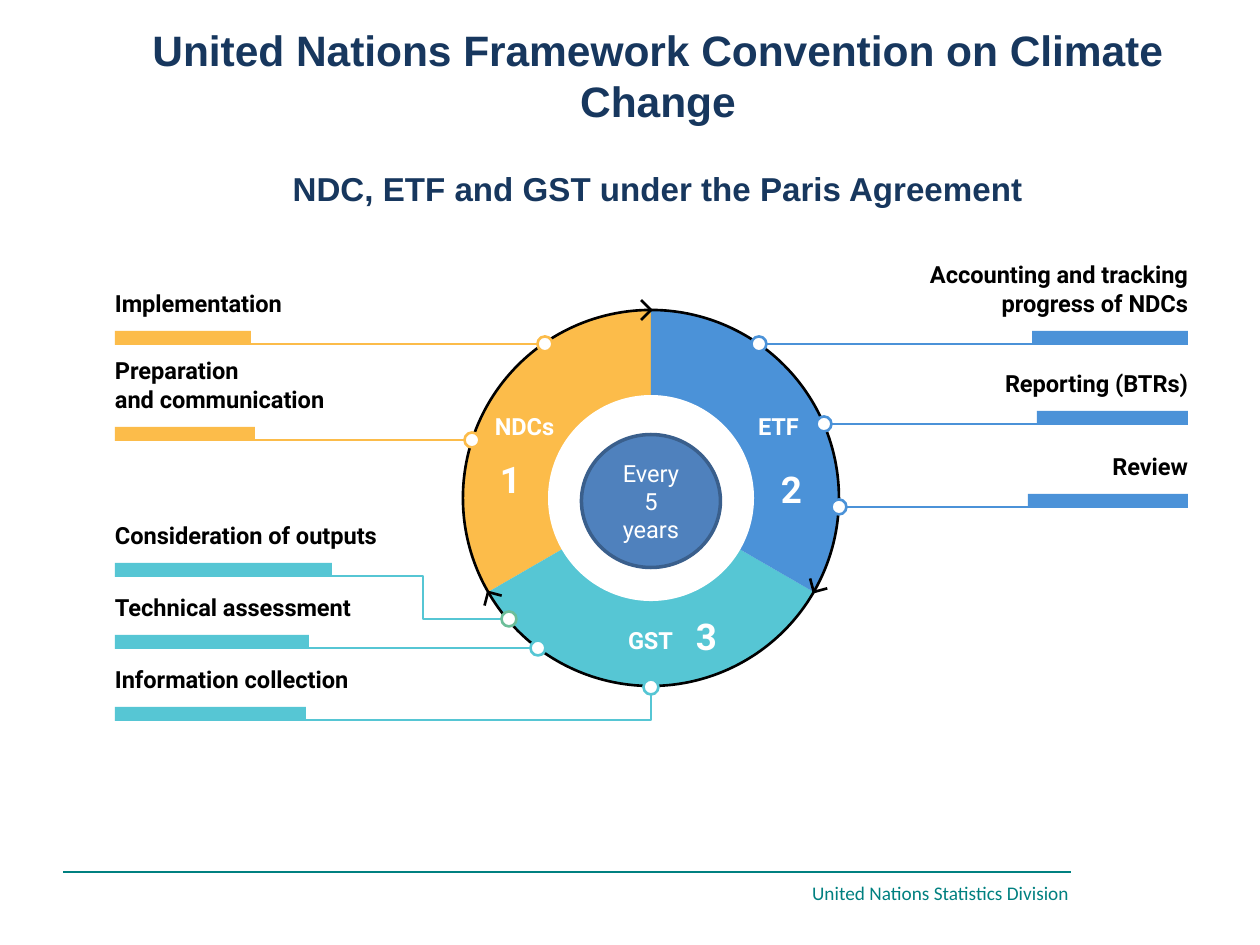
from math import cos, radians, sin

from lxml import etree
from pptx import Presentation
from pptx import util as u
from pptx.dml.color import RGBColor
from pptx.enum import shapes, text
from pptx.oxml import ns

PX = 914400 / 126
NAVY = RGBColor(0x17, 0x37, 0x5E)
TEAL = RGBColor(0x00, 0x80, 0x80)
YELLOW = RGBColor(0xFC, 0xBC, 0x4A)
BLUE = RGBColor(0x4B, 0x92, 0xD8)
CYAN = RGBColor(0x56, 0xC6, 0xD4)
GREEN = RGBColor(0x6C, 0xBE, 0x99)
HUB_FILL = RGBColor(0x4F, 0x81, 0xBD)
HUB_LINE = RGBColor(0x3A, 0x5F, 0x8C)
BLACK = RGBColor(0, 0, 0)
WHITE = RGBColor(255, 255, 255)

CX, CY, RADIUS = 651, 498, 188
LEFT, RIGHT = 115, 1188
BAR_H, DOT = 14, 15
ALIGN = text.PP_ALIGN
ANCHOR = text.MSO_ANCHOR


def px(*lengths):
    return [u.Emu(round(n * PX)) for n in lengths]


def write(p, content, size=13.5, color=BLACK, bold=True, font="Roboto",
          align=ALIGN.LEFT):
    p.text = content
    p.alignment = align
    for r in p.runs:
        r.font.name, r.font.size, r.font.bold = font, u.Pt(size), bold
        r.font.color.rgb = color


def add_label(s, box, content, bottom=6, **fmt):
    tf = s.shapes.add_textbox(*px(*box)).text_frame
    tf.word_wrap = True
    tf.vertical_anchor = ANCHOR.BOTTOM
    tf.margin_left = tf.margin_right = tf.margin_top = 0
    tf.margin_bottom = px(bottom)[0]
    write(tf.paragraphs[0], content, **fmt)


def paint(sp, fill=None, line=None, width=1.5):
    sp.shadow.inherit = False
    if fill is None:
        sp.fill.background()
    else:
        sp.fill.solid()
        sp.fill.fore_color.rgb = fill
    if line is None:
        sp.line.fill.background()
    else:
        sp.line.color.rgb = line
        sp.line.width = u.Pt(width)
    return sp


def add_ellipse(s, cx, cy, w, h, **look):
    box = px(cx - w / 2, cy - h / 2, w, h)
    return paint(s.shapes.add_shape(shapes.MSO_SHAPE.OVAL, *box), **look)


def add_outline(s, points, close=False, **look):
    first, *rest = [px(*pt) for pt in points]
    builder = s.shapes.build_freeform(*first)
    builder.add_line_segments(rest, close=close)
    return paint(builder.convert_to_shape(), **look)


def add_line(s, start, end, color):
    c = s.shapes.add_connector(shapes.MSO_CONNECTOR.STRAIGHT,
                               *px(*start, *end))
    c.line.color.rgb = color
    c.line.width = u.Pt(1.5)
    etree.SubElement(c._element.spPr, ns.qn("a:effectLst"))


def polar(angle, r, origin=(CX, CY)):
    """Point at a clockwise angle from twelve o'clock."""
    a = radians(angle)
    return origin[0] + r * sin(a), origin[1] - r * cos(a)


def add_sector(s, start, color):
    arc = [polar(start + step, RADIUS) for step in range(0, 121, 2)]
    add_outline(s, [(CX, CY), *arc], close=True, fill=color)


def add_ring_arrow(s, angle):
    """Open clockwise arrowhead on the ring."""
    tip = polar(angle, RADIUS)
    legs = [polar(angle + 270 + turn, 14, tip) for turn in (45, -45)]
    add_outline(s, [legs[0], tip, legs[1]], line=BLACK)


def add_callout(s, content, color, bar_y, bar_w, dot, lines=1, on_right=False,
                bend=(), dot_line=None):
    """Label above a bar, with a leader through any bends to a ring dot."""
    text_w = 301 if on_right else 480
    text_h = 7 + 28 * lines
    text_x = RIGHT - text_w if on_right else LEFT
    add_label(s, (text_x, bar_y - 8 - text_h, text_w, text_h), content,
              align=ALIGN.RIGHT if on_right else ALIGN.LEFT)

    bar_x = RIGHT - bar_w if on_right else LEFT
    paint(s.shapes.add_shape(shapes.MSO_SHAPE.RECTANGLE,
                             *px(bar_x, bar_y, bar_w, BAR_H)), fill=color)

    start = (RIGHT if on_right else LEFT, bar_y + BAR_H - 1)
    if bend:
        add_outline(s, [start, *bend, dot], line=color)
    else:
        add_line(s, start, dot, color)
    add_ellipse(s, *dot, DOT, DOT, fill=WHITE, line=dot_line or color)


def add_title(s):
    title = s.shapes.title
    title.left, title.top, title.width, title.height = px(127, 84, 1062, 64)
    tf = title.text_frame
    tf.auto_size = text.MSO_AUTO_SIZE.NONE
    tf.word_wrap = True
    tf.vertical_anchor = ANCHOR.MIDDLE
    fmt = dict(color=NAVY, font="Arial", align=ALIGN.CENTER)
    write(tf.paragraphs[0],
          "United Nations Framework Convention on Climate Change",
          size=24.3, **fmt)
    p = tf.add_paragraph()
    write(p, "NDC, ETF and GST under the Paris Agreement", size=18.9, **fmt)
    p.space_before = u.Pt(24)


def add_wheel(s):
    for start, color in ((240, YELLOW), (120, CYAN), (0, BLUE)):
        add_sector(s, start, color)
    add_ellipse(s, CX, CY, 206, 206, fill=WHITE)
    add_ellipse(s, CX, CY, 2 * RADIUS, 2 * RADIUS, line=BLACK)
    for angle in (0, 120, 240):
        add_ring_arrow(s, angle)

    white = dict(color=WHITE, align=ALIGN.CENTER)
    for name, name_at, number, number_at in (
            ("NDCs", (476, 411), "1", (462, 457)),
            ("ETF", (730, 411), "2", (743, 467)),
            ("GST", (602, 625), "3", (658, 614))):
        add_label(s, (*name_at, 97, 35), name, **white)
        add_label(s, (*number_at, 97, 50), number, size=21, **white)

    hub = add_ellipse(s, CX, 501, 139, 133, fill=HUB_FILL, line=HUB_LINE,
                      width=2)
    hub.text_frame.word_wrap = True
    hub.text_frame.vertical_anchor = ANCHOR.MIDDLE
    write(hub.text_frame.paragraphs[0], "Every 5 years", bold=False, **white)


def add_callouts(s):
    add_callout(s, "Accounting and tracking progress of NDCs", BLUE, 331, 156,
                (759, 344), lines=2, on_right=True)
    add_callout(s, "Reporting (BTRs)", BLUE, 411, 151, (824, 424),
                on_right=True)
    add_callout(s, "Review", BLUE, 494, 160, (839, 507), on_right=True)
    add_callout(s, "Implementation", YELLOW, 331, 136, (545, 344))
    add_callout(s, "Preparation\vand communication", YELLOW, 427, 140,
                (472, 440), lines=2)
    add_callout(s, "Consideration of outputs", CYAN, 563, 217, (509, 619),
                bend=[(423, 576), (423, 619)], dot_line=GREEN)
    add_callout(s, "Technical assessment", CYAN, 635, 194, (538, 648))
    add_callout(s, "Information collection", CYAN, 707, 191, (651, 687),
                bend=[(651, 720)])


def main():
    prs = Presentation()
    prs.slide_width, prs.slide_height = px(1260, 945)
    s = prs.slides.add_slide(prs.slide_layouts[5])
    add_line(s, (63, 872), (1071, 872), TEAL)
    add_label(s, (800, 873, 269, 37), "United Nations Statistics Division",
              size=11, color=TEAL, bold=False, font="Calibri",
              align=ALIGN.RIGHT)
    add_title(s)
    add_wheel(s)
    add_callouts(s)
    prs.save("out.pptx")


if __name__ == "__main__":
    main()
